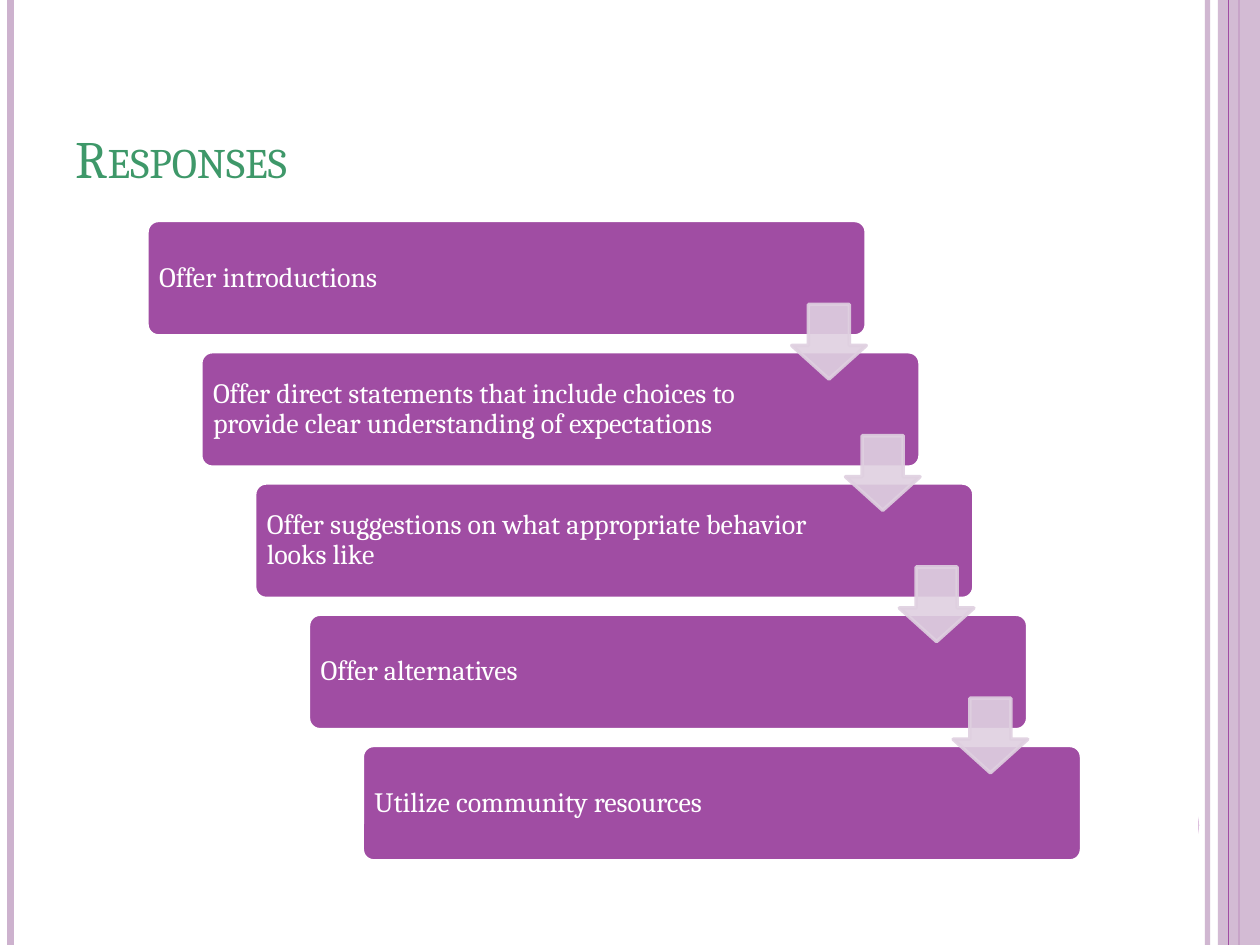
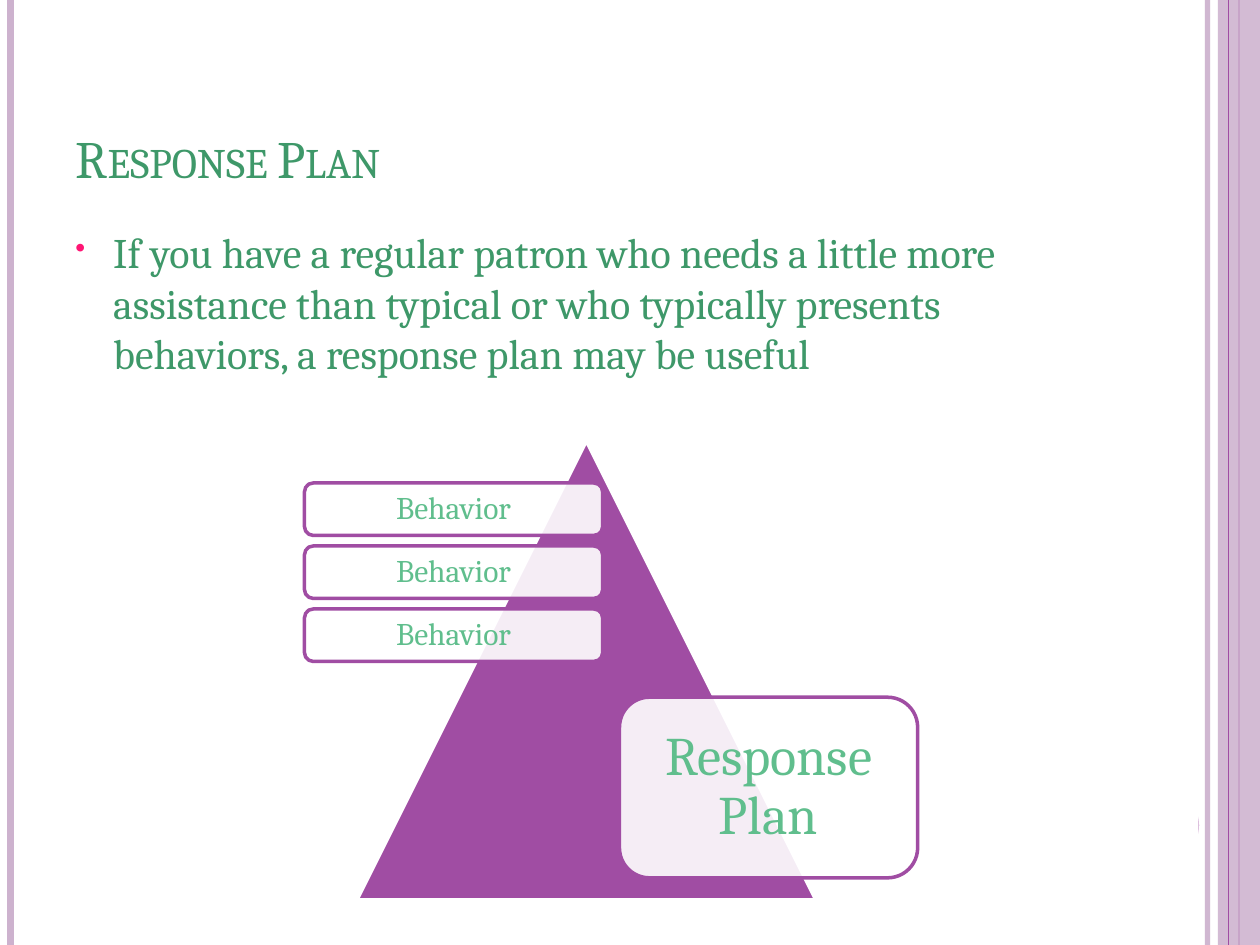
from dataclasses import dataclass

from lxml.etree import SubElement
from pptx import Presentation
from pptx.dml.color import RGBColor
from pptx.enum.shapes import MSO_CONNECTOR as Connector, MSO_SHAPE as Preset
from pptx.enum.text import MSO_ANCHOR as Anchor, MSO_AUTO_SIZE as AutoSize, PP_ALIGN as Align
from pptx.oxml.ns import qn
from pptx.util import Inches, Pt

FONT = "Cambria"
COLORS = {
    "white": "FFFFFF",
    "purple": "A04DA3",
    "lilac": "CDB2CE",
    "pale": "DFD0E0",
    "green": "3E9869",
    "mint": "60BE8D",
    "pink": "FF1574",
}
COLUMNS, ROWS = 120, 90
CELL = Inches(1 / 12)


@dataclass(frozen=True)
class Area:
    """A place on the slide, in grid columns and rows."""
    column: float
    row: float
    columns: float
    rows: float

    def shifted(self, columns: float, rows: float) -> "Area":
        return Area(self.column + columns, self.row + rows, self.columns, self.rows)

    def lengths(self) -> list[int]:
        return [round(cells * CELL) for cells in (self.column, self.row, self.columns, self.rows)]


@dataclass(frozen=True)
class Style:
    preset: Preset
    fill: str
    line: str | None = None
    opacity: int = 100
    line_opacity: int = 100
    adjustments: tuple[float, ...] = ()


@dataclass(frozen=True)
class Label:
    size: float
    color: str
    align: Align = Align.CENTER
    inset: float = 0.07
    right_inset: float = 0.07


@dataclass(frozen=True)
class Stripe:
    column: float
    color: str
    width: float
    opacity: int = 100


TITLE_AREA = Area(6, 3.6, 98, 15)
BODY_AREA = Area(6, 21, 98, 64)
BAND_AREA = Area(116, 0, 4, ROWS)
DISC_AREA = Area(107, 75, 7.2, 7.2)
COVER_AREA = Area(107, 75, 7, 8)
STRIPES_BELOW = [Stripe(115, "lilac", 3, 93), Stripe(1, "lilac", 4.5), Stripe(118, "purple", 1.5)]
STRIPE_ABOVE = Stripe(117, "purple", 0.75)

BAND = Style(Preset.RECTANGLE, "lilac", opacity=87)
DISC = Style(Preset.OVAL, "purple")
COVER = Style(Preset.ROUNDED_RECTANGLE, "white", "white")
STEP = Style(Preset.ROUNDED_RECTANGLE, "purple", "white", adjustments=(0.1,))
ARROW = Style(Preset.DOWN_ARROW, "pale", "pale", 90, 90, (0.55, 0.45))
TRIANGLE = Style(Preset.ISOSCELES_TRIANGLE, "purple", "white")
CARD = Style(Preset.ROUNDED_RECTANGLE, "white", "purple", opacity=90)

STEP_LABEL = Label(16, "white", Align.LEFT, right_inset=1.08)
BEHAVIOR_LABEL = Label(18, "mint")
PLAN_LABEL = Label(31, "mint", inset=0.13, right_inset=0.13)

STEPS = [
    "Offer introductions",
    "Offer direct statements that include choices to provide clear understanding of expectations",
    "Offer suggestions on what appropriate behavior looks like",
    "Offer alternatives",
    "Utilize community resources",
]
STEP_AREA = Area(14, 21, 68.5, 11)
ARROW_AREA = Area(75.4, 29, 7.1, 7.1)
STEP_SHIFT = (5.125, 12.5)

BEHAVIORS = ["Behavior"] * 3
BEHAVIOR_AREA = Area(29, 46, 28.4, 5)
BEHAVIOR_PITCH = 6
TRIANGLE_AREA = Area(34, 42, 43.7, 43.7)
PLAN_AREA = Area(59, 66.4, 28.4, 17.2)
BODY_TEXT = ("If you have a regular patron who needs a little more assistance than typical "
             "or who typically presents behaviors, a response plan may be useful")


def rgb(color: str) -> RGBColor:
    return RGBColor.from_string(COLORS[color])


def fade(part, opacity: int) -> None:
    """Set the opacity, in percent, of every colour inside an XML part."""
    if opacity < 100:
        for color in part.iter(qn("a:srgbClr")):
            SubElement(color, qn("a:alpha"), val=str(opacity * 1000))


def add_text(para, text: str, size: float, color: str):
    span = para.add_run()
    span.text = text
    span.font.name = FONT
    span.font.size = Pt(size)
    span.font.color.rgb = rgb(color)
    return span


def add_box(page, area: Area, style: Style):
    box = page.shapes.add_shape(style.preset, *area.lengths())
    box.shadow.inherit = False
    for index, value in enumerate(style.adjustments):
        box.adjustments[index] = value
    box.fill.solid()
    box.fill.fore_color.rgb = rgb(style.fill)
    properties = box.element.spPr
    fade(properties.find(qn("a:solidFill")), style.opacity)
    if style.line:
        box.line.color.rgb = rgb(style.line)
        box.line.width = Pt(2)
        fade(properties.find(qn("a:ln")), style.line_opacity)
    else:
        box.line.fill.background()
    return box


def add_labelled_box(page, area: Area, style: Style, text: str, label: Label) -> None:
    frame = add_box(page, area, style).text_frame
    frame.word_wrap = True
    frame.vertical_anchor = Anchor.MIDDLE
    frame.margin_left = frame.margin_top = frame.margin_bottom = Inches(label.inset)
    frame.margin_right = Inches(label.right_inset)
    para = frame.paragraphs[0]
    para.alignment = label.align
    para.line_spacing = 0.9
    add_text(para, text, label.size, label.color)


def add_stripe(page, stripe: Stripe) -> None:
    x = round(stripe.column * CELL)
    line = page.shapes.add_connector(Connector.STRAIGHT, x, 0, x, ROWS * CELL)
    line.line.color.rgb = rgb(stripe.color)
    line.line.width = Pt(stripe.width)
    properties = line.element.spPr
    fade(properties, stripe.opacity)
    SubElement(properties, qn("a:effectLst"))


def add_page(deck, title: str):
    """Add a slide with the shared side bands and title style."""
    page = deck.slides.add_slide(deck.slide_layouts[5])
    for stripe in STRIPES_BELOW:
        add_stripe(page, stripe)
    add_box(page, BAND_AREA, BAND)
    add_stripe(page, STRIPE_ABOVE)
    add_box(page, DISC_AREA, DISC)
    add_box(page, COVER_AREA, COVER)

    heading = page.shapes.title
    heading.left, heading.top, heading.width, heading.height = TITLE_AREA.lengths()
    frame = heading.text_frame
    frame.auto_size = AutoSize.NONE
    frame.vertical_anchor = Anchor.BOTTOM
    para = frame.paragraphs[0]
    para.alignment = Align.LEFT
    span = add_text(para, title, 30, "green")
    span.font._element.set("cap", "small")
    return page


def add_bullet_text(page, area: Area, text: str) -> None:
    frame = page.shapes.add_textbox(*area.lengths()).text_frame
    frame.word_wrap = True
    para = frame.paragraphs[0]
    para.space_before = Pt(6)
    add_text(para, text, 24, "green")
    properties = para._p.get_or_add_pPr()
    properties.set("marL", str(Inches(0.3)))
    properties.set("indent", str(-Inches(0.3)))
    bullet_color = SubElement(properties, qn("a:buClr"))
    SubElement(bullet_color, qn("a:srgbClr"), val=COLORS["pink"])
    SubElement(properties, qn("a:buSzPct"), val="70000")
    SubElement(properties, qn("a:buChar"), char="•")


def build_responses(deck) -> None:
    page = add_page(deck, "Responses")
    shifts = [tuple(index * step for step in STEP_SHIFT) for index in range(len(STEPS))]
    for text, shift in zip(STEPS, shifts):
        add_labelled_box(page, STEP_AREA.shifted(*shift), STEP, text, STEP_LABEL)
    for shift in shifts[:-1]:
        add_box(page, ARROW_AREA.shifted(*shift), ARROW)


def build_response_plan(deck) -> None:
    page = add_page(deck, "Response Plan")
    add_bullet_text(page, BODY_AREA, BODY_TEXT)
    add_box(page, TRIANGLE_AREA, TRIANGLE)
    for index, text in enumerate(BEHAVIORS):
        area = BEHAVIOR_AREA.shifted(0, index * BEHAVIOR_PITCH)
        add_labelled_box(page, area, CARD, text, BEHAVIOR_LABEL)
    add_labelled_box(page, PLAN_AREA, CARD, "Response Plan", PLAN_LABEL)


def main() -> None:
    deck = Presentation()
    deck.slide_width, deck.slide_height = COLUMNS * CELL, ROWS * CELL
    build_responses(deck)
    build_response_plan(deck)
    deck.save("out.pptx")


if __name__ == "__main__":
    main()
